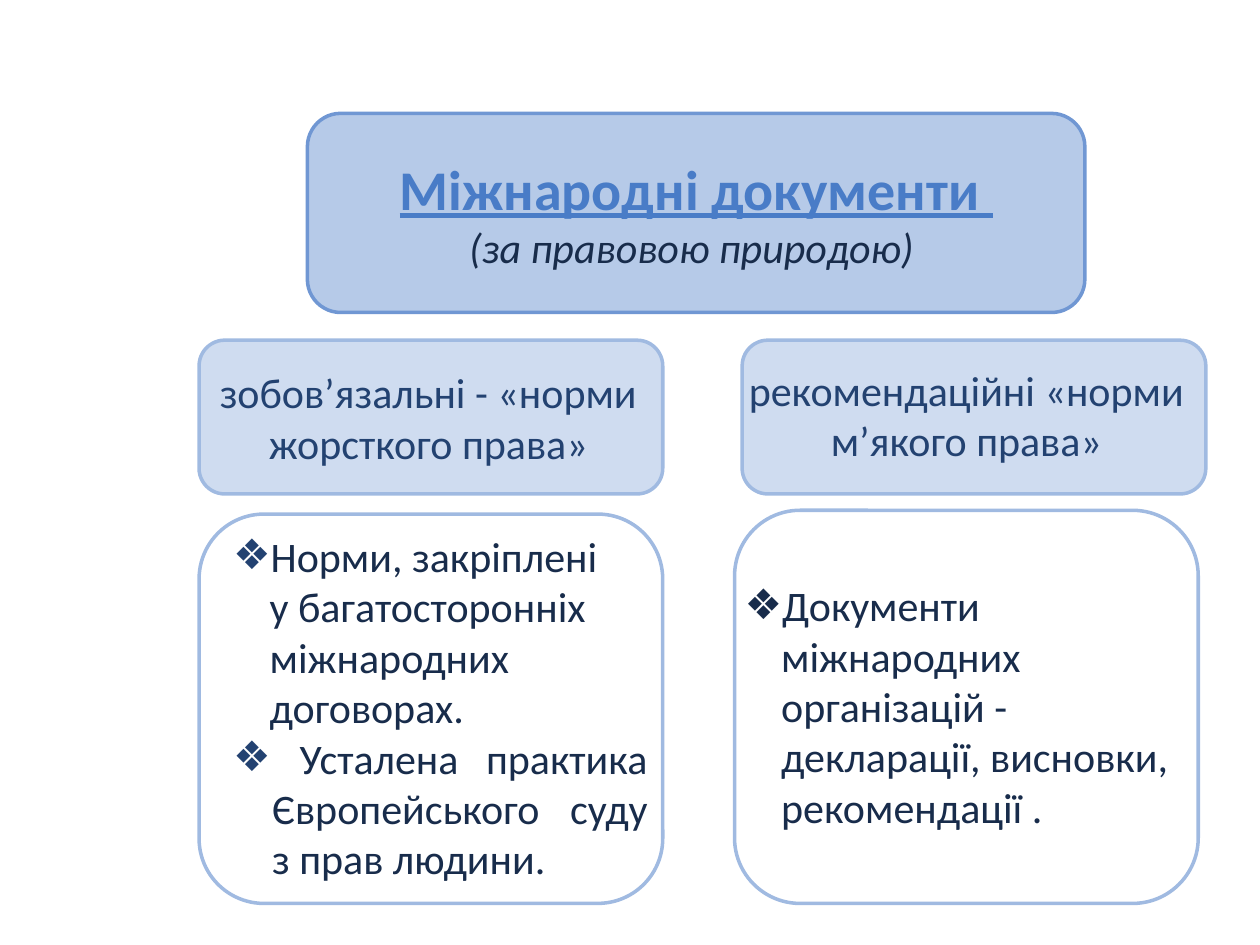
import pptx
import pptx.dml.color
import pptx.enum.shapes
import pptx.enum.text
import pptx.oxml
import pptx.oxml.ns
import pptx.util

Inches = pptx.util.Inches
Pt = pptx.util.Pt
RGBColor = pptx.dml.color.RGBColor
PP_ALIGN = pptx.enum.text.PP_ALIGN
MSO_ANCHOR = pptx.enum.text.MSO_ANCHOR

FONT = "Calibri"
WHITE = RGBColor(0xFF, 0xFF, 0xFF)
TITLE_FILL = RGBColor(0xB6, 0xCA, 0xE8)
TITLE_LINE = RGBColor(0x70, 0x97, 0xD3)
TITLE_TEXT = RGBColor(0x49, 0x7C, 0xC7)
PANEL_FILL = RGBColor(0xCF, 0xDC, 0xF0)
PANEL_LINE = RGBColor(0xA0, 0xBA, 0xE1)
HEADING_TEXT = RGBColor(0x23, 0x42, 0x71)
BODY_TEXT = RGBColor(0x18, 0x2C, 0x4B)

COLUMN_W = 3.68


def add_panel(slide, left, top, width, height, fill, line):
    sp = slide.shapes.add_shape(
        pptx.enum.shapes.MSO_SHAPE.ROUNDED_RECTANGLE,
        Inches(left), Inches(top), Inches(width), Inches(height))
    sp.shadow.inherit = False
    sp.fill.solid()
    sp.fill.fore_color.rgb = fill
    sp.line.color.rgb = line
    sp.line.width = Pt(2)


def fill_placeholder(slide, idx, box, lines, color, align,
                     anchor=MSO_ANCHOR.TOP):
    """Move a placeholder in front of the panels, fill it, return its paragraphs."""
    ph = next(p for p in slide.placeholders if p.placeholder_format.idx == idx)
    ph.element.getparent().append(ph.element)
    ph.left, ph.top, ph.width, ph.height = map(Inches, box)
    tf = ph.text_frame
    tf.text = "\n".join(lines)
    tf.word_wrap = True
    tf.auto_size = pptx.enum.text.MSO_AUTO_SIZE.NONE
    tf.vertical_anchor = anchor
    for p in tf.paragraphs:
        p.alignment = align
        p.space_before = Pt(0)
        for r in p.runs:
            r.font.name = FONT
            r.font.size = Pt(24)
            r.font.bold = False
            r.font.color.rgb = color
    return tf.paragraphs


def set_bullet(p, indent, color=None):
    """Hang a diamond bullet at the indent; without a colour, only indent."""
    pPr = p._p.get_or_add_pPr()
    pPr.set("marL", str(Inches(indent)))
    pPr.set("indent", str(-Inches(indent) if color else 0))
    ns = pptx.oxml.ns.nsdecls("a")
    if color:
        parts = [f'<a:buClr {ns}><a:srgbClr val="{color}"/></a:buClr>',
                 f'<a:buFont {ns} typeface="{FONT}"/>',
                 f'<a:buChar {ns} char="❖"/>']
    else:
        parts = [f"<a:buNone {ns}/>"]
    for part in parts:
        pPr.append(pptx.oxml.parse_xml(part))


def add_title(slide):
    box = (2.44, 0.9, 6.17, 1.58)
    add_panel(slide, *box, TITLE_FILL, TITLE_LINE)
    heading, subtitle = fill_placeholder(
        slide, 0, box, ["Міжнародні документи ", "(за правовою природою) "],
        BODY_TEXT, PP_ALIGN.CENTER, MSO_ANCHOR.MIDDLE)
    font = heading.runs[0].font
    font.size = Pt(32)
    font.bold = font.underline = True
    font.color.rgb = TITLE_TEXT
    subtitle.runs[0].font.italic = True


def add_headings(slide):
    for left in (5.89, 1.58):
        add_panel(slide, left, 2.7, COLUMN_W, 1.22, PANEL_FILL, PANEL_LINE)
    headings = [
        (1, 1.56, 2.86, ["зобов’язальні - «норми жорсткого права»"]),
        (3, 5.83, 2.84, ["рекомендаційні «норми", "м’якого права»"]),
    ]
    for idx, left, top, lines in headings:
        fill_placeholder(slide, idx, (left, top, COLUMN_W, 0.91), lines,
                         HEADING_TEXT, PP_ALIGN.CENTER)


def add_lists(slide):
    for left, top, height in ((1.58, 4.08, 3.09), (5.83, 4.05, 3.12)):
        add_panel(slide, left, top, COLUMN_W, height, WHITE, PANEL_LINE)

    norms, treaties, practice = fill_placeholder(
        slide, 2, (1.75, 4.16, 3.49, 2.93),
        ["Норми, закріплені ",
         "у багатосторонніх міжнародних договорах.",
         " Усталена практика Європейського суду з прав людини. "],
        BODY_TEXT, PP_ALIGN.JUSTIFY)
    treaties.alignment = PP_ALIGN.LEFT
    set_bullet(norms, 0.29, HEADING_TEXT)
    set_bullet(treaties, 0.29)
    set_bullet(practice, 0.31, HEADING_TEXT)

    (documents,) = fill_placeholder(
        slide, 4, (5.81, 4.55, COLUMN_W, 2.12),
        ["Документи міжнародних організацій - декларації, висновки, "
         "рекомендації ."],
        BODY_TEXT, PP_ALIGN.LEFT)
    set_bullet(documents, 0.29, BODY_TEXT)


def main():
    prs = pptx.Presentation()
    prs.slide_width = Inches(10)
    prs.slide_height = Inches(7.5)
    comparison = prs.slide_layouts.get_by_name("Comparison")
    slide = prs.slides.add_slide(comparison)
    add_title(slide)
    add_headings(slide)
    add_lists(slide)
    prs.save("out.pptx")


if __name__ == "__main__":
    main()
